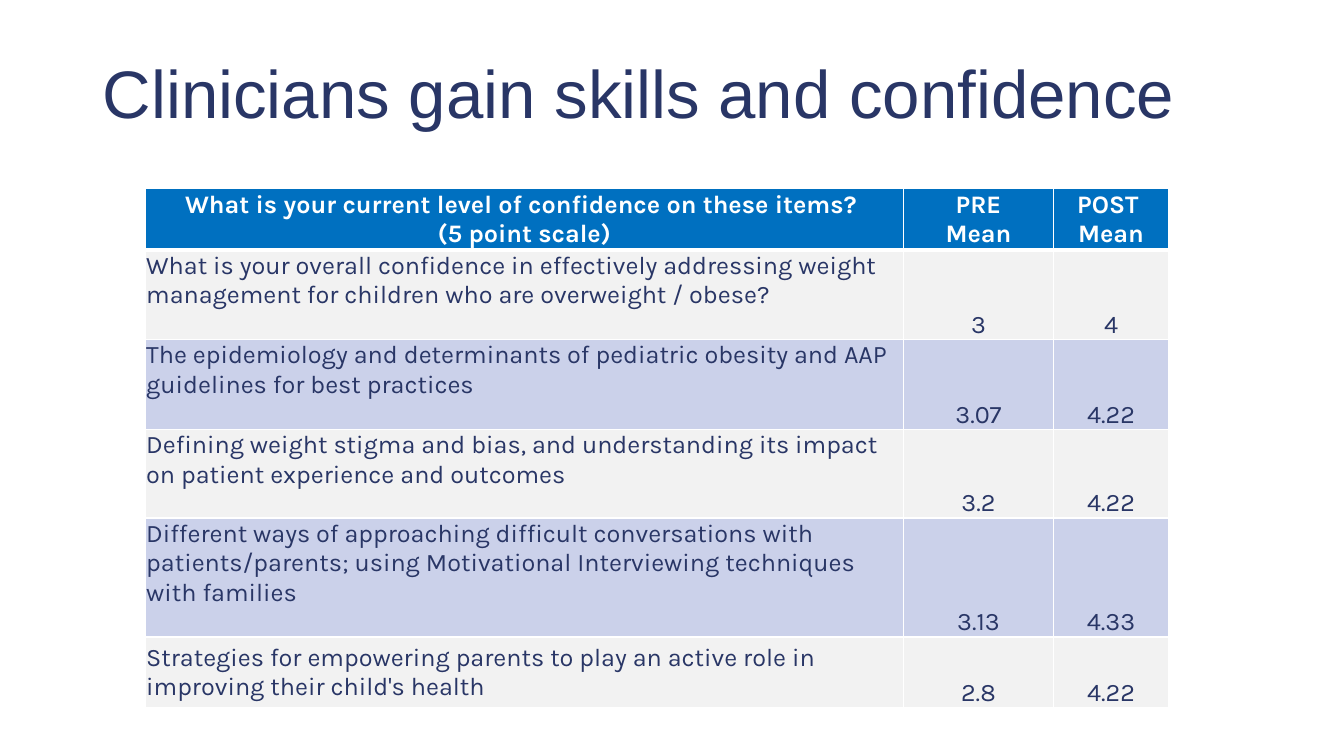
from dataclasses import dataclass

from lxml.etree import SubElement
from pptx import Presentation
from pptx.dml.color import RGBColor
from pptx.enum.text import MSO_ANCHOR as Anchor, PP_ALIGN as Align
from pptx.oxml.ns import qn
from pptx.util import Inches, Pt


@dataclass(frozen=True)
class Theme:
    navy: str = "293666"
    white: str = "FFFFFF"
    header: str = "0070C0"
    bands: tuple = ("F2F2F2", "CBD1EA")
    title_font: str = "Arial"
    table_font: str = "Karla"
    title_size: int = 48
    table_size: int = 18


THEME = Theme()

HEADINGS = [
    ["What is your current level of confidence on these items? ", "(5 point scale)"],
    ["PRE", "Mean"],
    ["POST ", "Mean"],
]
RATINGS = [
    ("What is your overall confidence in effectively addressing weight "
     "management for children who are overweight / obese?", "3", "4"),
    ("The epidemiology and determinants of pediatric obesity and AAP "
     "guidelines for best practices", "3.07", "4.22"),
    ("Defining weight stigma and bias, and understanding its impact "
     "on patient experience and outcomes", "3.2", "4.22"),
    ("Different ways of approaching difficult conversations with "
     "patients/parents; using Motivational Interviewing techniques "
     "with families", "3.13", "4.33"),
    ("Strategies for empowering parents to play an active role in "
     "improving their child's health", "2.8", "4.22"),
]
COLUMN_WIDTHS = [7.52, 1.49, 1.14]
ROW_HEIGHTS = [0.58, 0.89, 0.89, 0.88, 1.18, 0.7]


def add_run(paragraph, text, font, size, color, bold=False):
    run = paragraph.add_run()
    run.text = text
    run.font.name = font
    run.font.size = Pt(size)
    run.font.bold = bold
    run.font.color.rgb = RGBColor.from_string(color)


def add_title(slide, text):
    title = slide.shapes.add_textbox(Inches(0.92), Inches(0.4), Inches(11.5), Inches(1.45))
    frame = title.text_frame
    frame.word_wrap = True
    frame.margin_top = Inches(0.11)
    add_run(frame.paragraphs[0], text, THEME.title_font, THEME.title_size, THEME.navy)


def set_borders(cell, bottom=1):
    """Draw white rules round a cell; they must precede its fill."""
    properties = cell._tc.get_or_add_tcPr()
    for side, points in (("L", 1), ("R", 1), ("T", 1), ("B", bottom)):
        rule = SubElement(properties, qn(f"a:ln{side}"), w=str(Pt(points)))
        fill = SubElement(rule, qn("a:solidFill"))
        SubElement(fill, qn("a:srgbClr"), val=THEME.white)


def fill_cell(cell, lines, fill, color, align, anchor, bold=False, bottom=1):
    set_borders(cell, bottom)
    cell.fill.solid()
    cell.fill.fore_color.rgb = RGBColor.from_string(fill)
    cell.margin_left = cell.margin_right = cell.margin_top = Inches(0.01)
    cell.margin_bottom = 0
    cell.vertical_anchor = anchor
    frame = cell.text_frame
    for number, line in enumerate(lines):
        paragraph = frame.add_paragraph() if number else frame.paragraphs[0]
        paragraph.alignment = align
        add_run(paragraph, line, THEME.table_font, THEME.table_size, color, bold)


def add_ratings_table(slide):
    ratings = slide.shapes.add_table(
        len(ROW_HEIGHTS), len(COLUMN_WIDTHS), Inches(1.44), Inches(1.87),
        Inches(sum(COLUMN_WIDTHS)), Inches(sum(ROW_HEIGHTS))).table
    for column, width in zip(ratings.columns, COLUMN_WIDTHS):
        column.width = Inches(width)
    for row, height in zip(ratings.rows, ROW_HEIGHTS):
        row.height = Inches(height)

    # Header row
    for column, lines in enumerate(HEADINGS):
        fill_cell(ratings.cell(0, column), lines, THEME.header, THEME.white,
                  Align.CENTER, Anchor.MIDDLE, bold=True, bottom=3)

    # Question and its two means; the last question is centred in its row
    for row, (question, *means) in enumerate(RATINGS, start=1):
        band = THEME.bands[(row - 1) % 2]
        anchor = Anchor.MIDDLE if row == len(RATINGS) else Anchor.TOP
        fill_cell(ratings.cell(row, 0), [question], band, THEME.navy, Align.LEFT, anchor)
        for column, mean in enumerate(means, start=1):
            fill_cell(ratings.cell(row, column), [mean], band, THEME.navy,
                      Align.CENTER, Anchor.BOTTOM)


def main():
    deck = Presentation()
    deck.slide_width, deck.slide_height = Inches(13.33), Inches(7.5)
    slide = deck.slides.add_slide(deck.slide_layouts[6])
    add_title(slide, "Clinicians gain skills and confidence")
    add_ratings_table(slide)
    deck.save("out.pptx")


if __name__ == "__main__":
    main()
